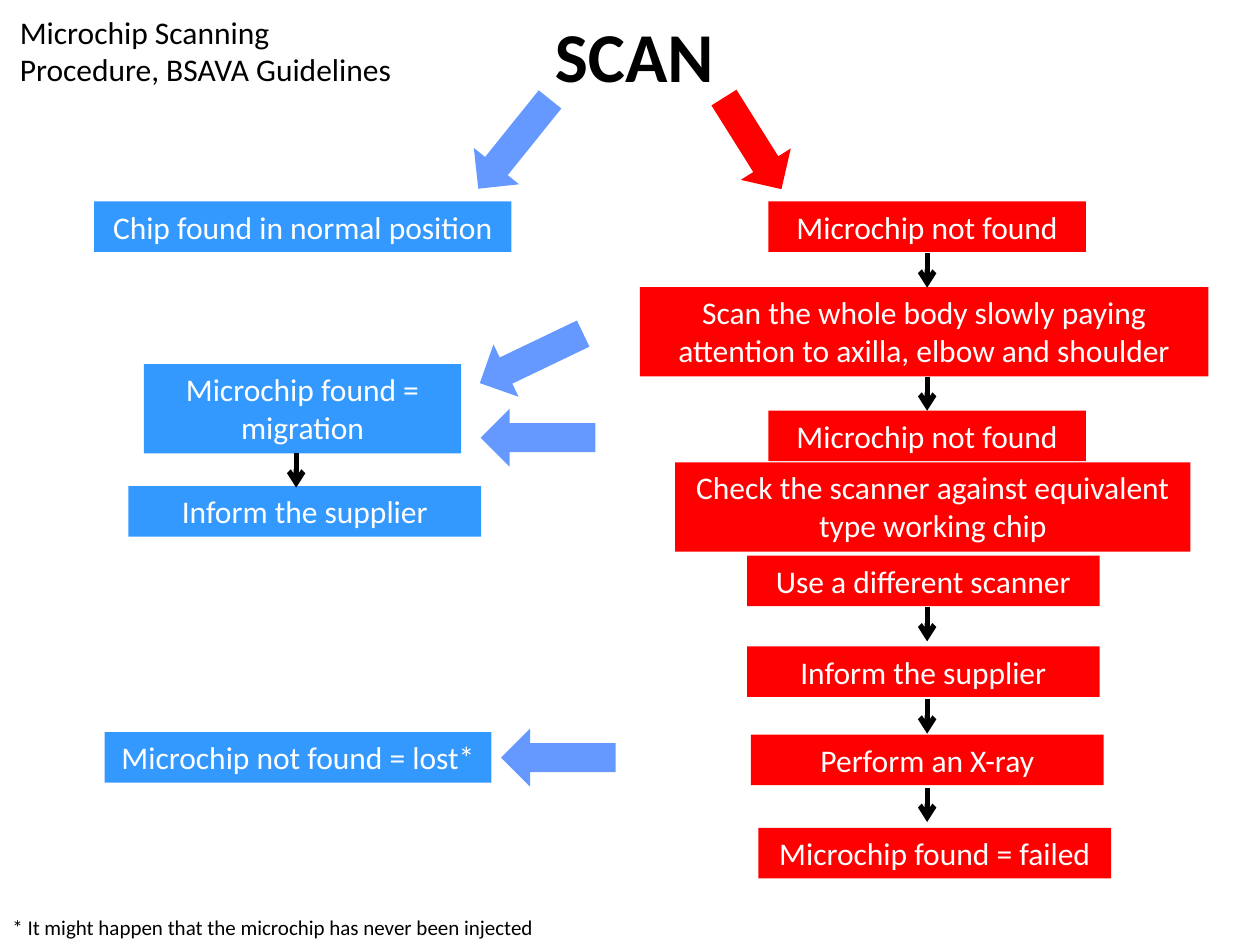
from dataclasses import dataclass

from lxml.etree import SubElement
from pptx import Presentation
from pptx.dml.color import RGBColor
from pptx.enum.shapes import MSO_CONNECTOR as Connector, MSO_SHAPE as Shape
from pptx.enum.text import MSO_ANCHOR as Anchor, PP_ALIGN as Align
from pptx.oxml.ns import qn
from pptx.util import Cm, Pt


@dataclass(frozen=True)
class Theme:
    font: str = "Calibri"
    black: RGBColor = RGBColor(0x00, 0x00, 0x00)
    white: RGBColor = RGBColor(0xFF, 0xFF, 0xFF)
    red: RGBColor = RGBColor(0xFF, 0x00, 0x00)
    blue: RGBColor = RGBColor(0x33, 0x99, 0xFF)
    arrow_blue: RGBColor = RGBColor(0x66, 0x99, 0xFF)
    title: Pt = Pt(40)
    body: Pt = Pt(18)
    note: Pt = Pt(12)
    line: Pt = Pt(3)


THEME = Theme()
ONE_LINE, TWO_LINES = 1.02, 1.8
STEP_LENGTH = 0.69

MISSING_STEPS = [
    ("Microchip not found", 15.49, 4.06, 6.4, ONE_LINE),
    ("Scan the whole body slowly paying attention to axilla, elbow and shoulder",
     12.9, 5.79, 11.46, TWO_LINES),
    ("Microchip not found", 15.49, 8.28, 6.4, ONE_LINE),
    ("Check the scanner against equivalent type working chip", 13.61, 9.32, 10.39, TWO_LINES),
    ("Use a different scanner", 15.06, 11.2, 7.11, ONE_LINE),
    ("Inform the supplier", 15.06, 13.03, 7.11, ONE_LINE),
    ("Perform an X-ray", 15.14, 14.81, 7.11, ONE_LINE),
    ("Microchip found = failed", 15.29, 16.69, 7.11, ONE_LINE),
]
OUTCOMES = [
    ("Chip found in normal position", 1.9, 4.06, 8.41, ONE_LINE),
    ("Microchip found = migration", 2.9, 7.34, 6.4, TWO_LINES),
    ("Inform the supplier", 2.59, 9.8, 7.11, ONE_LINE),
    ("Microchip not found = lost*", 2.11, 14.76, 7.8, ONE_LINE),
]
BRANCH_ARROWS = [
    (9.78, 1.75, 1.17, 2.31, 38.8, THEME.arrow_blue),
    (14.58, 1.8, 1.19, 2.18, 327.9, THEME.red),
    (10.13, 6.07, 1.17, 2.31, 64.4, THEME.arrow_blue),
    (10.26, 7.67, 1.17, 2.31, 90, THEME.arrow_blue),
    (10.67, 14.12, 1.17, 2.31, 90, THEME.arrow_blue),
]
STEP_ARROWS = [(18.69, top) for top in (5.11, 7.59, 12.24, 14.1, 15.88)] + [(5.97, 9.14)]


def write(box, text, size, color, align, bold=False):
    frame = box.text_frame
    frame.word_wrap = True
    para = frame.paragraphs[0]
    para.text = text
    para.alignment = align
    para.font.name = THEME.font
    para.font.size = size
    para.font.bold = bold
    para.font.color.rgb = color


def add_label(page, text, left, top, width, height, size, align=Align.LEFT, bold=False):
    box = page.shapes.add_textbox(Cm(left), Cm(top), Cm(width), Cm(height))
    write(box, text, size, THEME.black, align, bold)


def add_filled(page, kind, left, top, width, height, color):
    shape = page.shapes.add_shape(kind, Cm(left), Cm(top), Cm(width), Cm(height))
    shape.shadow.inherit = False
    shape.fill.solid()
    shape.fill.fore_color.rgb = color
    shape.line.fill.background()
    return shape


def add_step(page, text, left, top, width, height, color):
    box = add_filled(page, Shape.RECTANGLE, left, top, width, height, color)
    box.text_frame.vertical_anchor = Anchor.TOP
    write(box, text, THEME.body, THEME.white, Align.CENTER)


def add_branch_arrow(page, left, top, width, height, angle, color):
    arrow = add_filled(page, Shape.DOWN_ARROW, left, top, width, height, color)
    arrow.rotation = angle


def add_step_arrow(page, x, top):
    arrow = page.shapes.add_connector(
        Connector.STRAIGHT, Cm(x), Cm(top), Cm(x), Cm(top + STEP_LENGTH))
    arrow.line.color.rgb = THEME.black
    arrow.line.width = THEME.line
    SubElement(arrow.line._get_or_add_ln(), qn("a:tailEnd"), type="arrow")
    SubElement(arrow._element.spPr, qn("a:effectLst"))


def main():
    deck = Presentation()
    deck.slide_width, deck.slide_height = Cm(25.4), Cm(19.05)
    page = deck.slides.add_slide(deck.slide_layouts[6])

    add_label(page, "SCAN", 10.69, 0.13, 4.19, 1.96, THEME.title, Align.CENTER, bold=True)
    for steps, color in ((MISSING_STEPS, THEME.red), (OUTCOMES, THEME.blue)):
        for step in steps:
            add_step(page, *step, color)
    for arrow in BRANCH_ARROWS:
        add_branch_arrow(page, *arrow)
    for x, top in STEP_ARROWS:
        add_step_arrow(page, x, top)
    add_label(page, "* It might happen that the microchip has never been injected",
              0, 18.31, 12.19, 0.76, THEME.note)
    add_label(page, "Microchip Scanning Procedure, BSAVA Guidelines",
              0.15, 0.13, 8.08, TWO_LINES, THEME.body)

    deck.save("out.pptx")


if __name__ == "__main__":
    main()
